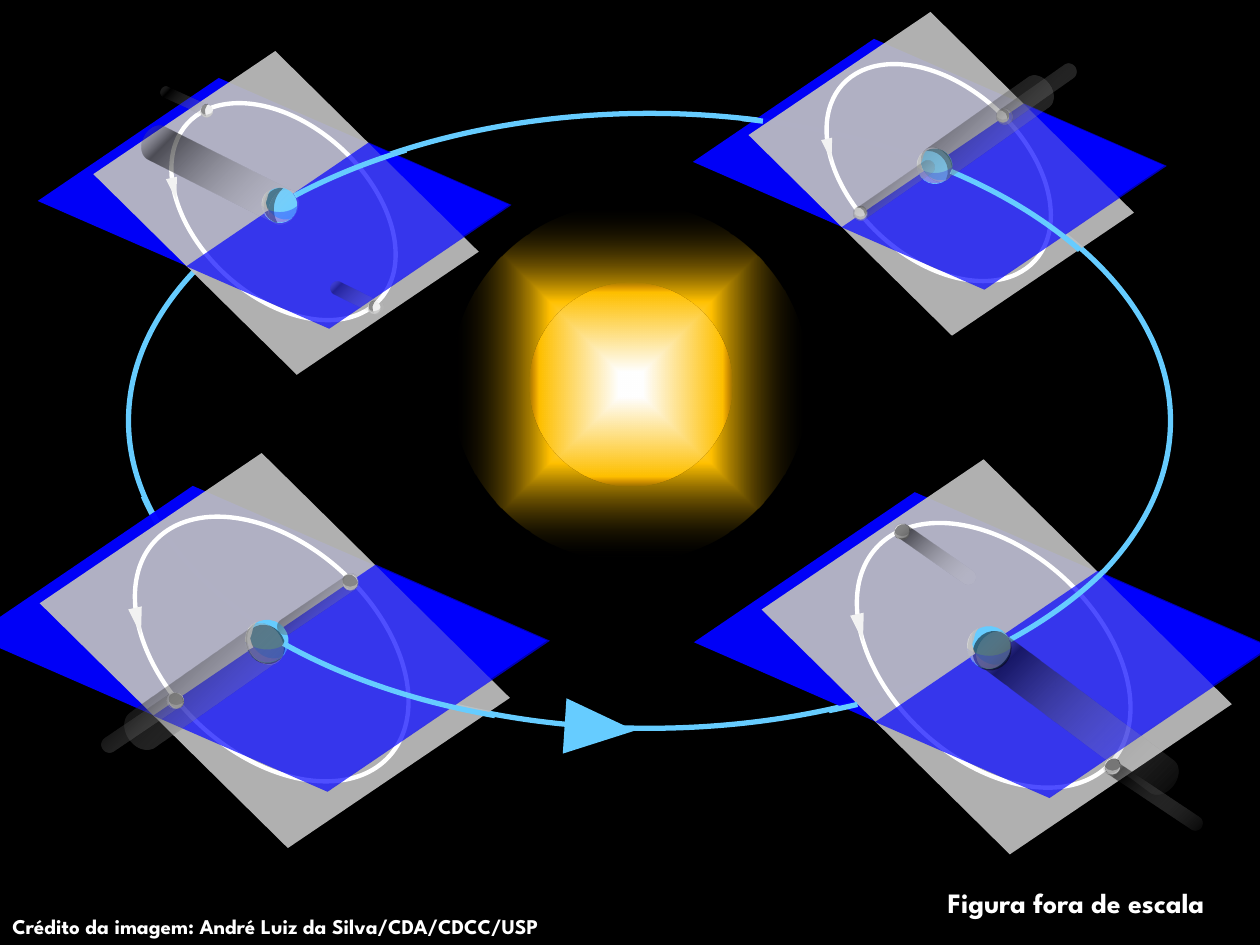
from dataclasses import dataclass

from lxml.etree import SubElement
from pptx import Presentation
from pptx.dml.color import RGBColor
from pptx.enum.shapes import MSO_SHAPE
from pptx.enum.text import PP_ALIGN
from pptx.oxml.ns import qn
from pptx.util import Inches, Pt


@dataclass(frozen=True)
class Theme:
    font: str = "League Spartan"
    credit_size: int = 12
    caption_size: int = 16
    path_width: float = 3
    moon_path_width: float = 2.5
    black: str = "000000"
    white: str = "FFFFFF"
    sky: str = "66CCFF"
    blue: str = "0000FF"
    plane: str = "BFBFBF"
    glint: str = "C0C0C0"
    light: str = "D9D9D9"
    pale: str = "F2F2F2"
    gold: str = "FFC000"
    amber: str = "EE8800"


@dataclass(frozen=True)
class Shade:
    """Night side of a ball, measured from the ball's centre at rear scale."""
    kind: MSO_SHAPE
    dx: float
    dy: float
    w: float
    h: float
    rot: float
    adj: tuple = ()
    alpha: int = 47


@dataclass(frozen=True)
class System:
    """Earth and Moon at one place of the yearly path."""
    earth: tuple
    scale: float
    earth_shade: Shade
    moon_shade: Shade
    moons: tuple
    arc: tuple        # left, top, start and end degrees
    shadows: tuple    # frame, rotation, adjustment, darkness
    front_moons: tuple = ()


T = Theme()
FRONT = 1.22
MOON, OVAL = MSO_SHAPE.MOON, MSO_SHAPE.OVAL
RIM = [(-.07, -.13), (-.09, -.09), (-.1, -.05), (-.11, -.02), (-.1, .02), (-.09, .04),
       (-.13, .06), (-.14, .03), (-.14, -.01), (-.13, -.06), (-.11, -.1)]

SYSTEMS = {
    "upper right": System(
        (7.42, 1.32), 1,
        Shade(MOON, .06, -.04, .13, .28, 146.6, (.36,)),
        Shade(MOON, .02, -.02, .05, .1, 142.5, (.46,)),
        ((6.83, 1.69), (7.96, .92)), (.98, .9, 320.4, 338.2),
        (((8.16, .37, .13, .75), 235.1, .98, 56),
         ((7.69, .42, .29, 1.2), 234.8, .75, 56),
         ((7.04, 1.14, .11, .75), 235.2, .98, 56))),
    "upper left": System(
        (2.22, 1.63), 1,
        Shade(MOON, -.06, -.01, .13, .28, 9.4, (.63,)),
        Shade(MOON, -.02, -.01, .05, .1, 9.4, (.63,)),
        ((2.97, 2.44), (1.64, .88)), (.97, .92, 213.3, 229.1),
        (((1.6, .72, .29, 1.34), 116.5, .75, 56),
         ((2.78, 2.14, .11, .45), 116.4, .98, 35),
         ((1.43, .59, .09, .43), 114, .87, 56))),
    "lower right": System(
        (7.85, 5.14), FRONT,
        Shade(OVAL, .02, .02, .24, .27, 220, alpha=51),
        Shade(OVAL, 0, 0, .09, .11, 48.2, alpha=51),
        ((7.16, 4.22),), (1.05, .81, 19.7, 32.7),
        (((8.39, 4.71, .32, 1.9), 306.8, .75, 56),
         ((7.36, 4.02, .12, .75), 304.8, .98, 56),
         ((9.09, 5.85, .12, .92), 303.7, .98, 56)),
        front_moons=((8.83, 6.08),)),
    "lower left": System(
        (2.12, 5.09), FRONT,
        Shade(OVAL, -.01, .02, .24, .27, 316.4, alpha=51),
        Shade(OVAL, 0, 0, .09, .11, 316.4, alpha=51),
        ((1.4, 5.56), (2.78, 4.62)), (.95, .86, 116.4, 147.9),
        (((2.46, 4.42, .13, .75), 56, .98, 56),
         ((1.45, 4.73, .34, 1.44), 55, .77, 56),
         ((1.06, 5.36, .13, .75), 56, .98, 56))),
}


def set_fill(sp, color, alpha=100):
    sp.fill.solid()
    sp.fill.fore_color.rgb = RGBColor.from_string(color)
    if alpha < 100:
        clr = sp.fill.fore_color._xFill.find(qn("a:srgbClr"))
        SubElement(clr, qn("a:alpha"), val=str(alpha * 1000))


def set_gradient(sp, stops, kind, focus):
    sp.fill.gradient()
    grad = sp.element.spPr.find(qn("a:gradFill"))
    for child in list(grad):
        grad.remove(child)
    stop_list = SubElement(grad, qn("a:gsLst"))
    for pos, color, alpha in stops:
        gs = SubElement(stop_list, qn("a:gs"), pos=str(pos * 1000))
        clr = SubElement(gs, qn("a:srgbClr"), val=color)
        SubElement(clr, qn("a:alpha"), val=str(alpha * 1000))
    path = SubElement(grad, qn("a:path"), path=kind)
    SubElement(path, qn("a:fillToRect"),
               {side: str(v * 1000) for side, v in zip("ltrb", focus)})


def add_shape(shapes, kind, frame, rot=0, adj=(), fill=None, alpha=100, line=None, width=0):
    sp = shapes.add_shape(kind, *map(Inches, frame))
    sp.shadow.inherit = False
    sp.rotation = rot
    for i, value in enumerate(adj):
        sp.adjustments[i] = value
    if fill:
        set_fill(sp, fill, alpha)
    else:
        sp.fill.background()
    if line:
        sp.line.color.rgb = RGBColor.from_string(line)
        sp.line.width = Pt(width)
    else:
        sp.line.fill.background()
    return sp


def add_part(shapes, kind, origin, scale, dx, dy, w, h, **style):
    """Place a shape by the offset of its centre from origin."""
    x, y = origin
    frame = (x + (dx - w / 2) * scale, y + (dy - h / 2) * scale, w * scale, h * scale)
    return add_shape(shapes, kind, frame, **style)


def add_arc(shapes, left, top, start, end):
    """Draw part of the yearly path; an adjustment of 0.6 is one degree."""
    add_shape(shapes, MSO_SHAPE.ARC, (left, top, 8.3, 4.92), adj=(start * .6, end * .6),
              line=T.sky, width=T.path_width)


def add_shade(shapes, origin, scale, shade):
    add_part(shapes, shade.kind, origin, scale, shade.dx, shade.dy, shade.w, shade.h,
             rot=shade.rot, adj=shade.adj, fill=T.black, alpha=shade.alpha)


def add_moon(shapes, center, scale, shade):
    add_part(shapes, OVAL, center, scale, 0, 0, .1, .1, rot=351.5, fill=T.pale)
    add_shade(shapes, center, scale, shade)
    add_part(shapes, MOON, center, scale, 0, .03, .05, .1,
             rot=270, adj=(.5,), fill=T.glint, alpha=72)


def add_rim(shapes, center, scale):
    points = [tuple(Inches(c + d * scale) for c, d in zip(center, pt)) for pt in RIM]
    builder = shapes.build_freeform(*points[0])
    builder.add_line_segments(points[1:])
    sp = builder.convert_to_shape()
    sp.shadow.inherit = False
    set_fill(sp, T.plane, 85)
    sp.line.fill.background()


def add_shadow_cone(shapes, frame, rot, adj, darkness):
    sp = add_shape(shapes, MSO_SHAPE.CAN, frame, rot, (adj,))
    set_gradient(sp, [(0, T.white, 0), (81, T.black, darkness), (100, T.plane, 0)],
                 "circle", (100, 100, 0, 0))


def add_system(slide, system):
    shapes = slide.shapes.add_group_shape().shapes
    at = (shapes, MSO_SHAPE.PARALLELOGRAM, system.earth, system.scale)
    add_part(*at, -.05, -.02, 3.44, 1.47, rot=23.6, adj=(.63,), fill=T.blue, alpha=97)
    add_part(*at, .05, .06, 2.61, 1.71, rot=44.6, adj=(.2,), fill=T.plane, alpha=92)
    at_ball = (shapes, OVAL, system.earth, system.scale)
    add_part(*at_ball, .03, .05, 2.07, 1.36, rot=42.6, line=T.white, width=T.moon_path_width)
    add_part(*at, .55, .24, 2.17, 1.48, rot=23.6, adj=(.63,), fill=T.blue, alpha=69)
    add_part(*at_ball, 0, 0, .28, .28, rot=351.5, fill=T.sky)
    at_moon = (shapes, MOON, system.earth, system.scale)
    add_part(*at_moon, -.06, .04, .13, .28, rot=320.6, adj=(.34,), fill=T.light, alpha=94)
    add_shade(shapes, system.earth, system.scale, system.earth_shade)
    add_part(*at_moon, 0, .07, .13, .28, rot=270, adj=(.63,), fill=T.blue, alpha=36)
    add_rim(shapes, system.earth, system.scale)
    add_part(shapes, MSO_SHAPE.ISOSCELES_TRIANGLE, system.earth, system.scale,
             -.84, -.13, .09, .18, rot=167.6, fill=T.pale)
    for center in system.moons:
        add_moon(shapes, center, system.scale, system.moon_shade)
    add_arc(shapes, *system.arc)
    for shadow in system.shadows:
        add_shadow_cone(shapes, *shadow)
    for center in system.front_moons:
        add_moon(shapes, center, system.scale, system.moon_shade)


def add_sun(slide):
    shapes = slide.shapes.add_group_shape().shapes
    glow = [(7, T.white, 100), (45, T.gold, 100), (100, T.black, 0)]
    disc = [(12, T.white, 100), (90, T.gold, 100), (100, T.amber, 0)]
    for frame, stops in (((3.58, 1.61, 2.84, 2.85), glow), ((4.2, 2.24, 1.61, 1.62), disc)):
        set_gradient(add_shape(shapes, OVAL, frame), stops, "shape", (50, 50, 50, 50))


def add_text(slide, text, frame, size, align=PP_ALIGN.LEFT, wrap=True):
    tf = slide.shapes.add_textbox(*map(Inches, frame)).text_frame
    tf.word_wrap = wrap
    tf.text = text
    p = tf.paragraphs[0]
    p.alignment = align
    font = p.runs[0].font
    font.name, font.size, font.bold = T.font, Pt(size), True
    font.color.rgb = RGBColor.from_string(T.white)


def main():
    prs = Presentation()
    prs.slide_width, prs.slide_height = Inches(10), Inches(7.5)
    s = prs.slides.add_slide(prs.slide_layouts[6])
    set_fill(s.background, T.black)
    add_shape(s.shapes, OVAL, (1.02, .9, 8.27, 4.88), line=T.sky, width=T.path_width)
    add_text(s, "Crédito da imagem: André Luiz da Silva/CDA/CDCC/USP",
             (0, 7.2, 5.28, .3), T.credit_size)
    add_shape(s.shapes, MSO_SHAPE.ISOSCELES_TRIANGLE, (4.54, 5.5, .44, .56), 93.8, fill=T.sky)
    add_system(s, SYSTEMS["upper right"])
    add_system(s, SYSTEMS["upper left"])
    add_arc(s.shapes, .98, .9, 287.5, 291.1)
    add_arc(s.shapes, 1.01, .87, 167.7, 171.4)
    add_system(s, SYSTEMS["lower right"])
    add_text(s, "Figura fora de escala", (7.28, 6.98, 2.52, .37), T.caption_size,
             PP_ALIGN.CENTER, wrap=False)
    add_arc(s.shapes, 1.1, .85, 55.7, 60.3)
    add_system(s, SYSTEMS["lower left"])
    add_sun(s)
    prs.save("out.pptx")


if __name__ == "__main__":
    main()
